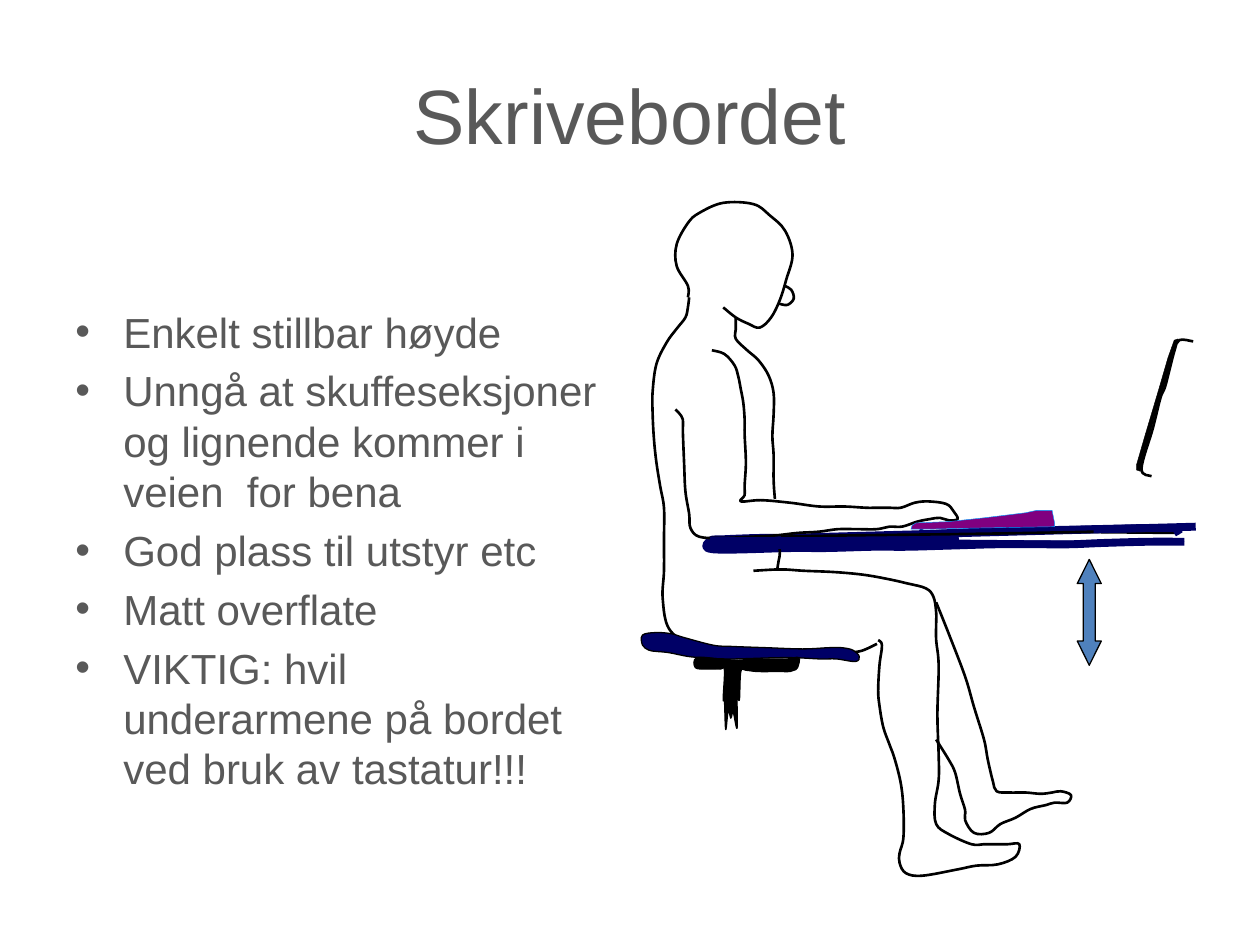
from lxml import etree
from pptx import Presentation
from pptx.dml.color import RGBColor
from pptx.enum.shapes import MSO_CONNECTOR, MSO_SHAPE
from pptx.enum.text import MSO_ANCHOR, PP_ALIGN
from pptx.oxml.ns import qn
from pptx.util import Inches, Pt

STRAIGHT = MSO_CONNECTOR.STRAIGHT
RECTANGLE = MSO_SHAPE.RECTANGLE
HEIGHT_ARROW = MSO_SHAPE.UP_DOWN_ARROW
MIDDLE = MSO_ANCHOR.MIDDLE
CENTER = PP_ALIGN.CENTER

BLACK, NAVY, BLUE = "000000", "000066", "4F81BD"
PURPLE, CYAN, GREY = "800080", "0099FF", "595959"

ADVICE = [
    "Enkelt stillbar høyde",
    "Unngå at skuffeseksjoner og lignende kommer i veien  for bena",
    "God plass til utstyr etc",
    "Matt overflate",
    "VIKTIG: hvil underarmene på bordet ved bruk av tastatur!!!",
]

DESK_TOP = [(7.29, 4.22), (7.33, 4.24), (7.77, 4.22), (9.1, 4.19), (9.33, 4.19), (9.36, 4.24)]
DESK_UNDERSIDE = [
    (6.2, 4.27), (6.01, 4.27), (5.75, 4.28), (5.64, 4.29), (5.66, 4.36), (6.28, 4.35),
    (6.56, 4.35), (6.93, 4.34), (7.21, 4.34), (7.56, 4.33), (7.91, 4.32), (8.24, 4.32),
    (8.5, 4.32), (8.75, 4.31), (9.11, 4.3), (9.4, 4.3)]
CHEST = [
    (5.84, 2.52), (5.84, 2.61), (5.84, 2.69), (5.93, 2.78), (6.02, 2.86), (6.1, 2.98),
    (6.14, 3.12), (6.14, 3.29), (6.13, 3.46), (6.14, 3.61), (6.14, 3.81), (6.15, 3.96)]
HEAD = [
    (5.46, 2.36), (5.46, 2.27), (5.37, 2.11), (5.37, 1.94), (5.46, 1.77), (5.55, 1.69),
    (5.74, 1.61), (5.98, 1.62), (6.11, 1.71), (6.23, 1.83), (6.29, 2.02), (6.24, 2.22),
    (6.19, 2.38), (6.12, 2.52), (6.03, 2.6), (5.94, 2.57), (5.84, 2.52), (5.74, 2.44)]
BACK = [
    (5.47, 2.36), (5.46, 2.44), (5.44, 2.52), (5.37, 2.61), (5.29, 2.72), (5.21, 2.89),
    (5.18, 3.11), (5.18, 3.28), (5.19, 3.48), (5.21, 3.67), (5.24, 3.86), (5.27, 4.03),
    (5.27, 4.28), (5.27, 4.53), (5.26, 4.75), (5.31, 4.99), (5.49, 5.12), (5.74, 5.17),
    (6.11, 5.19), (6.44, 5.19), (6.63, 5.18), (6.82, 5.17), (6.96, 5.11)]
NEAR_LEG = [
    (6.97, 5.08), (7, 5.12), (6.98, 5.28), (6.97, 5.48), (6.98, 5.6), (7.01, 5.77),
    (7.06, 5.91), (7.1, 6.02), (7.15, 6.22), (7.17, 6.42), (7.17, 6.65), (7.14, 6.77),
    (7.14, 6.85), (7.19, 6.93), (7.32, 6.95), (7.6, 6.9), (7.75, 6.87), (7.92, 6.86),
    (8.06, 6.8), (8.09, 6.7), (8, 6.7), (7.9, 6.7), (7.81, 6.7), (7.71, 6.7),
    (7.53, 6.62), (7.43, 6.54), (7.42, 6.38), (7.45, 6.19), (7.45, 5.99), (7.44, 5.67),
    (7.45, 5.28), (7.43, 5.08), (7.43, 4.95), (7.43, 4.86), (7.41, 4.74), (7.35, 4.67),
    (7.2, 4.63), (7.02, 4.59), (6.84, 4.56), (6.62, 4.54), (6.38, 4.53), (6.24, 4.52),
    (6.15, 4.52), (5.98, 4.53)]
ARM = [
    (5.65, 2.78), (5.75, 2.81), (5.83, 2.9), (5.86, 2.99), (5.88, 3.09), (5.9, 3.2),
    (5.91, 3.33), (5.91, 3.45), (5.92, 3.67), (5.91, 3.85), (5.91, 3.93), (5.88, 3.98),
    (6.04, 3.97), (6.27, 3.99), (6.5, 4.02), (6.7, 4.02), (6.87, 4.03), (6.96, 4.03),
    (7.06, 4.03), (7.15, 4.03), (7.26, 3.99), (7.37, 3.98), (7.51, 4), (7.57, 4.06),
    (7.6, 4.12), (7.53, 4.13), (7.46, 4.11), (7.38, 4.12), (7.28, 4.14), (7.16, 4.18),
    (7.06, 4.18), (6.96, 4.2), (6.81, 4.2), (6.65, 4.2), (6.5, 4.22), (6.33, 4.23),
    (6.15, 4.25), (5.96, 4.26), (5.73, 4.27), (5.55, 4.26), (5.48, 4.19), (5.47, 4.08),
    (5.44, 3.9), (5.43, 3.68), (5.42, 3.43), (5.42, 3.33), (5.39, 3.28), (5.36, 3.25)]
FAR_LEG = [
    (7.43, 4.78), (7.53, 5.03), (7.66, 5.37), (7.73, 5.61), (7.81, 5.87), (7.84, 6.03),
    (7.88, 6.2), (7.91, 6.28), (8.01, 6.29), (8.14, 6.29), (8.26, 6.3), (8.35, 6.29),
    (8.42, 6.28), (8.5, 6.31), (8.47, 6.37), (8.37, 6.37), (8.3, 6.39), (8.18, 6.42),
    (8.06, 6.49), (7.94, 6.54), (7.85, 6.61), (7.73, 6.61), (7.66, 6.51), (7.66, 6.43),
    (7.62, 6.3), (7.58, 6.13), (7.53, 6.03), (7.43, 5.87)]
NOSE = [(6.23, 2.27), (6.28, 2.3), (6.3, 2.37), (6.25, 2.42), (6.18, 2.41)]
DESK_EDGE = [(6.2, 4.26), (6.71, 4.25), (7.53, 4.24), (8.18, 4.23), (8.68, 4.22)]
SCREEN_OUTLINE = [
    (9.47, 2.71), (9.36, 2.7), (9.32, 2.79), (9.25, 3.06), (9.21, 3.16), (9.15, 3.4),
    (9.06, 3.72), (9.14, 3.78)]
BELLY = [(6.17, 4.28), (6.19, 4.38), (6.18, 4.45), (6.17, 4.51)]
SEAT = [
    (5.1, 5.12), (5.1, 5.04), (5.21, 5.02), (5.33, 5.03), (5.43, 5.06), (5.66, 5.12),
    (5.8, 5.13), (6.08, 5.14), (6.37, 5.15), (6.58, 5.14), (6.68, 5.14), (6.77, 5.16),
    (6.82, 5.21), (6.79, 5.25), (6.64, 5.23), (6.51, 5.23), (6.32, 5.22), (6.15, 5.22),
    (5.79, 5.23), (5.58, 5.22), (5.46, 5.21), (5.31, 5.18), (5.21, 5.17), (5.15, 5.16)]
SEAT_POST = [
    (5.53, 5.22), (5.52, 5.3), (5.62, 5.31), (5.72, 5.31), (5.75, 5.32), (5.74, 5.55),
    (5.75, 5.56), (5.76, 5.79), (5.78, 5.64), (5.8, 5.7), (5.81, 5.67), (5.82, 5.65),
    (5.85, 5.78), (5.85, 5.53), (5.86, 5.55), (5.87, 5.54), (5.88, 5.33), (5.92, 5.32),
    (6.01, 5.33), (6.17, 5.33), (6.27, 5.33), (6.3, 5.32), (6.33, 5.3), (6.34, 5.22),
    (6.25, 5.23), (6.11, 5.23), (5.98, 5.23), (5.85, 5.24), (5.71, 5.23)]
SCREEN = [
    (9.32, 2.7), (9.27, 2.84), (9.2, 3.08), (9.09, 3.45), (9.02, 3.69), (9.02, 3.73),
    (9.05, 3.74), (9.11, 3.51), (9.18, 3.25), (9.25, 3.03), (9.33, 2.76), (9.35, 2.69)]
KEYBOARD = [
    (7.23, 4.2), (7.24, 4.17), (7.27, 4.15), (7.53, 4.14), (7.81, 4.11), (8.14, 4.07),
    (8.23, 4.05), (8.35, 4.05), (8.37, 4.15), (8.37, 4.18), (7.81, 4.19), (7.35, 4.2)]


def color(value):
    return RGBColor.from_string(value)


def set_format(target, values):
    for name, value in values.items():
        setattr(target, name, value)


def paint(shape, fill, line, width):
    shape.shadow.inherit = False
    if fill:
        shape.fill.solid()
        shape.fill.fore_color.rgb = color(fill)
    else:
        shape.fill.background()
    shape.line.color.rgb = color(line)
    shape.line.width = Pt(width)


def spline_controls(points, closed):
    """Return three Bezier points for every step of a smooth curve through points."""
    if closed:
        ring = [points[-1], *points, *points[:2]]
    else:
        ring = [points[0], *points, points[-1]]
    controls = []
    for before, start, end, after in zip(ring, ring[1:], ring[2:], ring[3:]):
        controls.append(tuple(s + (e - b) / 6 for b, s, e in zip(before, start, end)))
        controls.append(tuple(e - (a - s) / 6 for s, e, a in zip(start, end, after)))
        controls.append(end)
    return controls


def add_outline(shapes, points, fill=None, line=BLACK, width=1.5, closed=False, smooth=True):
    route = spline_controls(points, closed) if smooth else points[1:]
    builder = shapes.build_freeform(*map(Inches, points[0]))
    builder.add_line_segments([tuple(map(Inches, p)) for p in route], close=closed)
    shape = builder.convert_to_shape()
    if smooth:
        steps = list(shape.element.iter(qn("a:lnTo")))
        for i in range(0, len(steps), 3):
            curve = etree.Element(qn("a:cubicBezTo"))
            steps[i].addprevious(curve)
            for step in steps[i:i + 3]:
                curve.append(step[0])
                step.getparent().remove(step)
    paint(shape, fill, line, width)


def add_preset(shapes, kind, box, fill, line, guides=None):
    """Add a preset shape; guides maps adjustment names to thousandths of a percent."""
    shape = shapes.add_shape(kind, *map(Inches, box))
    if guides:
        adjustments = next(shape.element.iter(qn("a:avLst")))
        adjustments[:] = []
        for name, value in guides.items():
            etree.SubElement(adjustments, qn("a:gd"), name=name, fmla=f"val {value}")
    paint(shape, fill, line, 0.75)


def add_line(shapes, start, end, line, width):
    connector = shapes.add_connector(STRAIGHT, *map(Inches, (*start, *end)))
    connector.line.color.rgb = color(line)
    connector.line.width = Pt(width)
    etree.SubElement(connector.element.spPr, qn("a:effectLst"))


def format_font(paragraph, size):
    set_format(paragraph.font, {"size": Pt(size), "name": "Arial"})
    paragraph.font.color.rgb = color(GREY)


def fill_title(title, text):
    set_format(title, {"left": Inches(0.5), "top": Inches(0.21),
                       "width": Inches(9), "height": Inches(1.39)})
    title.text_frame.text = text
    title.text_frame.vertical_anchor = MIDDLE
    paragraph = title.text_frame.paragraphs[0]
    paragraph.alignment = CENTER
    format_font(paragraph, 44)


def add_bullets(slide, items):
    frame = slide.shapes.add_textbox(*map(Inches, (0.5, 2.38, 4.42, 4.32))).text_frame
    frame.word_wrap = True
    for i, item in enumerate(items):
        paragraph = frame.paragraphs[0] if i == 0 else frame.add_paragraph()
        paragraph.text = item
        properties = paragraph._p.get_or_add_pPr()
        properties.set("marL", str(Inches(0.38)))
        properties.set("indent", str(-Inches(0.38)))
        etree.SubElement(properties, qn("a:buFont"), typeface="Arial")
        etree.SubElement(properties, qn("a:buChar"), char="•")
        paragraph.space_before = Pt(4.8 if i else 0)
        format_font(paragraph, 24)


def draw_workplace(shapes):
    add_outline(shapes, DESK_TOP, BLACK, NAVY, 4.5, smooth=False)
    add_outline(shapes, DESK_UNDERSIDE, NAVY, NAVY, 4.5)
    add_line(shapes, (6.21, 4.27), (9.49, 4.18), NAVY, 4.5)
    for part in (CHEST, HEAD, BACK, NEAR_LEG, ARM, FAR_LEG, NOSE, DESK_EDGE,
                 SCREEN_OUTLINE, BELLY):
        add_outline(shapes, part)
    add_preset(shapes, HEIGHT_ARROW, (8.55, 4.44, 0.19, 0.84), BLUE, BLACK,
               {"adj1": 50000, "adj2": 100900})
    add_outline(shapes, SEAT, NAVY, BLACK, 0.75, closed=True)
    add_outline(shapes, SEAT_POST, BLACK, BLACK, 0.75, closed=True)
    add_outline(shapes, SCREEN, BLACK, BLACK, 0.25, closed=True, smooth=False)
    add_preset(shapes, RECTANGLE, (5.64, 4.27, 1.97, 0.08), NAVY, NAVY)
    add_outline(shapes, KEYBOARD, PURPLE, CYAN, 0.25, closed=True, smooth=False)


def main():
    deck = Presentation()
    set_format(deck, {"slide_width": Inches(10), "slide_height": Inches(7.5)})
    slide = deck.slides.add_slide(deck.slide_layouts[5])
    fill_title(slide.shapes.title, "Skrivebordet")
    add_bullets(slide, ADVICE)
    draw_workplace(slide.shapes.add_group_shape().shapes)
    deck.save("out.pptx")


if __name__ == "__main__":
    main()
